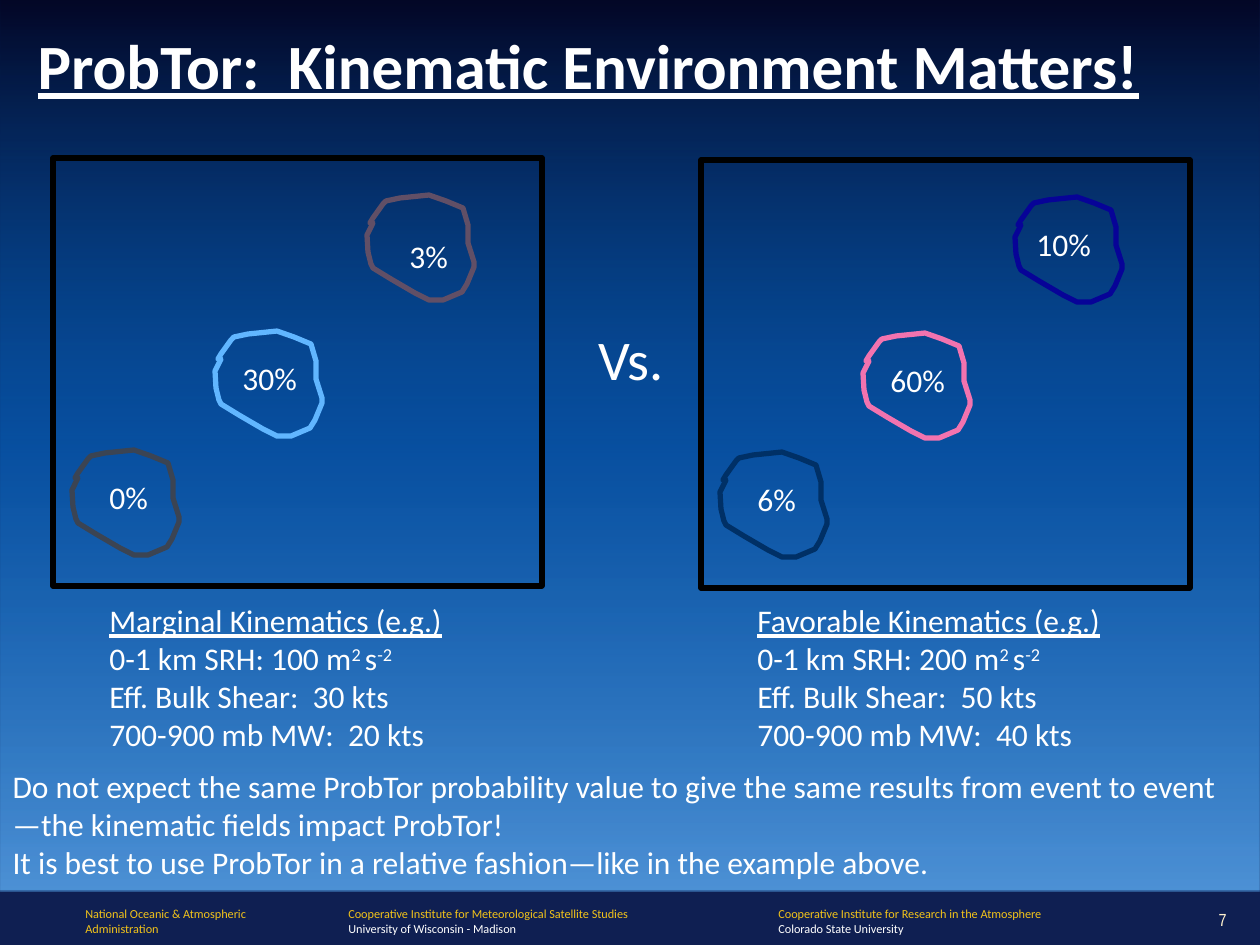
from lxml import etree
from pptx import Presentation
from pptx.dml.color import RGBColor
from pptx.enum.shapes import MSO_SHAPE
from pptx.enum.text import MSO_ANCHOR, MSO_AUTO_SIZE, PP_ALIGN
from pptx.oxml import parse_xml
from pptx.oxml.ns import nsdecls, qn
from pptx.util import Emu, Pt

PX = 914400 / 126
WHITE, GOLD, CREAM = "FFFFFF", "F2C31A", "FFF1CE"

# Storm cell outline, relative to the cell's top left corner
CELL_OUTLINE = [
    (62, 0), (33, 3), (19, 6), (16, 9), (6, 23), (3, 28), (6, 28), (0, 40),
    (1, 57), (4, 69), (6, 73), (24, 84), (48, 98), (54, 101), (62, 105),
    (76, 105), (95, 97), (100, 89), (107, 72), (107, 67), (101, 48),
    (101, 30), (96, 13), (79, 6),
]
CELL_PLACES = [(19, 292), (162, 173), (314, 37)]

# Panel corner, then each cell's probability, colour and label offset
PANELS = [
    ((53, 158), [("0%", "3B4453", (25, 22)), ("30%", "61B6FF", (15, 22)),
                 ("3%", "614F66", (30, 36))],
     "Marginal", 100, 30, 20),
    ((701, 160), [("6%", "003066", (25, 22)), ("60%", "F273AF", (15, 22)),
                  ("10%", "070397", (9, 22))],
     "Favorable", 200, 50, 40),
]
FOOTERS = [
    (73, 199, "National Oceanic & Atmospheric", "Administration", GOLD),
    (336, 368, "Cooperative Institute for Meteorological Satellite Studies",
     "University of Wisconsin - Madison", WHITE),
    (766, 368, "Cooperative Institute for Research in the Atmosphere",
     "Colorado State University", WHITE),
]
TAKEAWAYS = [
    "Do not expect the same ProbTor probability value to give the same results "
    "from event to event—the kinematic fields impact ProbTor!",
    "It is best to use ProbTor in a relative fashion—like in the example above.",
]


def px(length):
    return Emu(round(length * PX))


def rgb(color):
    return RGBColor.from_string(color)


class SlideWriter:
    def __init__(self, slide, font="Calibri", color=WHITE, line_width=3):
        self.slide, self.font = slide, font
        self.color, self.line_width = color, line_width

    def style(self, paragraph, size, color=None, font=None, bold=False, underline=False):
        for run in paragraph.runs:
            run.font.size = Pt(size)
            run.font.name = font or self.font
            run.font.color.rgb = rgb(color or self.color)
            run.font.bold, run.font.underline = bold, underline

    def place(self, shape, x, y, width, height):
        shape.left, shape.top = px(x), px(y)
        shape.width, shape.height = px(width), px(height)

    def outline(self, shape, color):
        shape.shadow.inherit = False
        shape.fill.background()
        shape.line.color.rgb = rgb(color)
        shape.line.width = Pt(self.line_width)

    def rectangle(self, x, y, width, height):
        return self.slide.shapes.add_shape(
            MSO_SHAPE.RECTANGLE, px(x), px(y), px(width), px(height))

    def frame(self, x, y, width, height, color="000000"):
        self.outline(self.rectangle(x, y, width, height), color)

    def sky(self, width, height, stops):
        """Draw a top-to-bottom gradient from (position, colour, opacity) percents."""
        band = self.rectangle(0, 0, width, height)
        band.shadow.inherit = False
        band.line.fill.background()
        band.fill.gradient()
        gradient = band.fill._xPr.find(qn("a:gradFill"))
        for child in list(gradient):
            gradient.remove(child)
        stop_list = etree.SubElement(gradient, qn("a:gsLst"))
        for position, color, opacity in stops:
            stop_list.append(parse_xml(
                f'<a:gs {nsdecls("a")} pos="{position * 1000}"><a:srgbClr val="{color}">'
                f'<a:alpha val="{opacity * 1000}"/></a:srgbClr></a:gs>'))
        gradient.append(parse_xml(f'<a:lin {nsdecls("a")} ang="5400000" scaled="0"/>'))

    def storm_cell(self, x, y, color):
        builder = self.slide.shapes.build_freeform(*CELL_OUTLINE[0], scale=PX)
        builder.add_line_segments(CELL_OUTLINE[1:], close=True)
        self.outline(builder.convert_to_shape(px(x), px(y)), color)

    def text(self, x, y, width, height, lines, size, **look):
        """Add a text box; parts between ^ marks are superscript."""
        frame = self.slide.shapes.add_textbox(
            px(x), px(y), px(width), px(height)).text_frame
        frame.word_wrap = True
        frame.text = "\n".join(lines)
        for paragraph in frame.paragraphs:
            if "^" in paragraph.text:
                parts = paragraph.text.split("^")
                paragraph.text = parts[0]
                for index, part in enumerate(parts[1:], 1):
                    run = paragraph.add_run()
                    run.text = part
                    if index % 2:
                        run._r.get_or_add_rPr().set("baseline", "30000")
            self.style(paragraph, size, **look)
        return frame

    def title(self, x, y, width, height, wording, size):
        title = self.slide.shapes.title
        self.place(title, x, y, width, height)
        frame = title.text_frame
        frame.text = wording
        frame.vertical_anchor = MSO_ANCHOR.TOP
        frame.auto_size = MSO_AUTO_SIZE.NONE
        frame.paragraphs[0].alignment = PP_ALIGN.LEFT
        self.style(frame.paragraphs[0], size, bold=True, underline=True)

    def body(self, x, y, width, height, lines, size):
        body = self.slide.placeholders[1]
        self.place(body, x, y, width, height)
        frame = body.text_frame
        frame.text = "\n".join(lines)
        frame.auto_size = MSO_AUTO_SIZE.NONE
        for paragraph in frame.paragraphs:
            properties = paragraph._p.get_or_add_pPr()
            properties.set("marL", "0")
            properties.set("indent", "0")
            etree.SubElement(properties, qn("a:buNone"))
            paragraph.space_before = Pt(0)
            self.style(paragraph, size)


def main():
    presentation = Presentation()
    presentation.slide_width, presentation.slide_height = px(1260), px(945)
    slide = presentation.slides.add_slide(presentation.slide_layouts[1])
    slide.background.fill.solid()
    slide.background.fill.fore_color.rgb = rgb("0F1F52")
    writer = SlideWriter(slide)

    writer.sky(1260, 891, [(0, "01021E", 85), (50, "007EEB", 50), (100, "61B6FF", 75)])
    # The placeholders come with the slide, so the sky moves behind them
    tree = slide.shapes._spTree
    tree.insert(2, tree[-1])

    for x, width, institute, home, home_color in FOOTERS:
        footer = writer.text(x, 900, width, 43, [institute, home], 7, color=GOLD)
        writer.style(footer.paragraphs[1], 7, color=home_color)
    number = writer.text(1176, 903, 63, 32, ["7"], 10, color=CREAM, font="Arial Narrow")
    number.vertical_anchor = MSO_ANCHOR.MIDDLE
    number.paragraphs[0].alignment = PP_ALIGN.RIGHT

    writer.title(25, 20, 1213, 89, "ProbTor:  Kinematic Environment Matters!", 36)
    writer.text(586, 318, 96, 81, ["Vs."], 32)

    for (left, top), cells, setting, helicity, shear, wind in PANELS:
        writer.frame(left, top, 489, 428)
        for (x, y), (chance, color, (dx, dy)) in zip(CELL_PLACES, cells):
            writer.storm_cell(left + x, top + y, color)
            writer.text(left + x + dx, top + y + dy, 106, 50, [chance], 18)
        kinematics = writer.text(left + 44, 595, 392, 165, [
            f"{setting} Kinematics (e.g.)",
            f"0-1 km SRH: {helicity} m^2 ^s^-2",
            f"Eff. Bulk Shear:  {shear} kts",
            f"700-900 mb MW:  {wind} kts"], 18)
        writer.style(kinematics.paragraphs[0], 18, underline=True)

    writer.body(0, 761, 1239, 127, TAKEAWAYS, 18)
    presentation.save("out.pptx")


if __name__ == "__main__":
    main()
